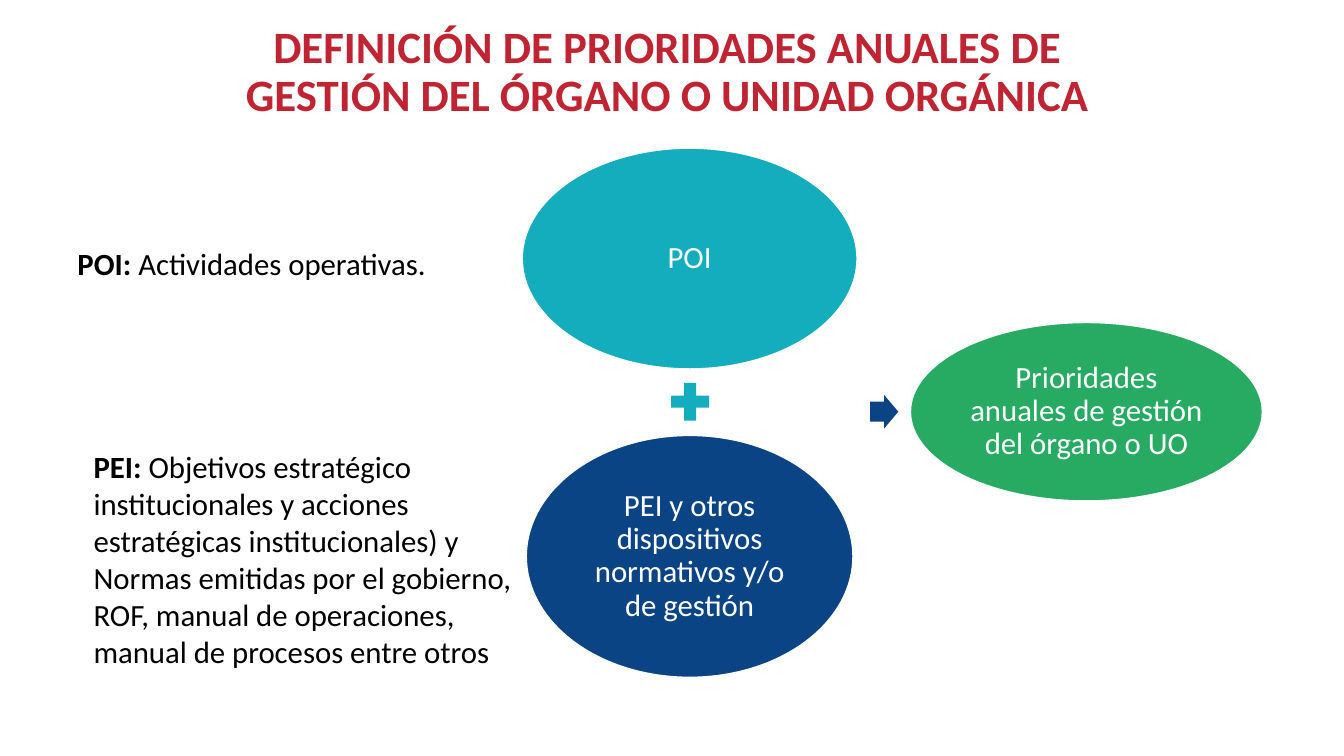
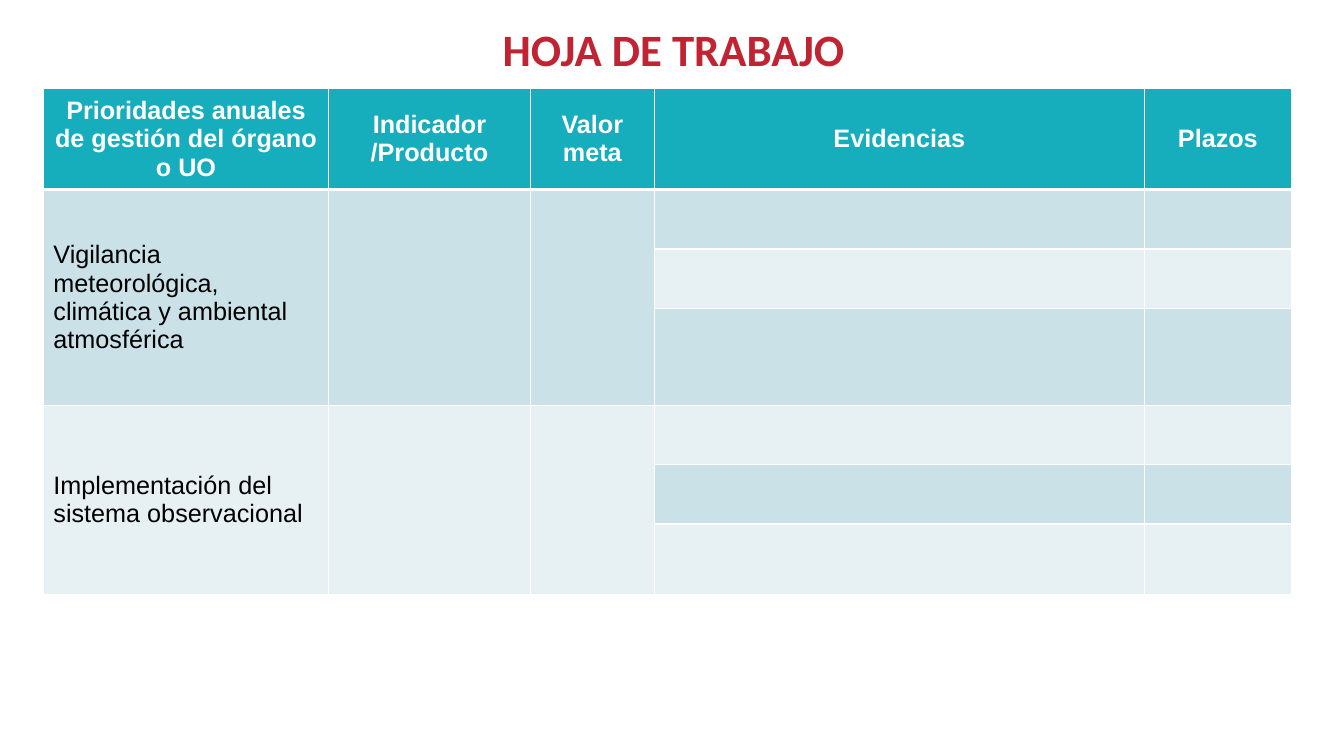
from lxml import etree
from pptx import Presentation
from pptx.dml.color import RGBColor
from pptx.enum.shapes import MSO_SHAPE
from pptx.enum.text import MSO_ANCHOR, PP_ALIGN
from pptx.oxml.ns import qn
from pptx.util import Pt

PX = 9144
ELLIPSE, PLUS, ARROW = MSO_SHAPE.OVAL, MSO_SHAPE.MATH_PLUS, MSO_SHAPE.RIGHT_ARROW
TOP, MIDDLE = MSO_ANCHOR.TOP, MSO_ANCHOR.MIDDLE
LEFT, CENTER = PP_ALIGN.LEFT, PP_ALIGN.CENTER
COLORS = {
    "title": "C02433", "teal": "13ADBD", "navy": "0B4484", "green": "27AB63",
    "header": "16ADBD", "odd": "CAE2E7", "even": "E7F1F4",
    "white": "FFFFFF", "black": "000000",
}


def color(name):
    return RGBColor.from_string(COLORS[name])


class Slides:
    def __init__(self):
        self.deck = Presentation()
        self.deck.slide_width, self.deck.slide_height = 1333 * PX, 750 * PX
        self.page = None

    def add_page(self, title, left, top, width, height):
        self.page = self.deck.slides.add_slide(self.deck.slide_layouts[6])
        self.text([[(title, True)]], left, top, width, height,
                  size=32, ink="title", align=CENTER, anchor=MIDDLE, spacing=0.9)

    def fill_text(self, frame, paragraphs, size=22, ink="black", font="Calibri",
                  align=LEFT, spacing=1.0):
        for index, spans in enumerate(paragraphs):
            para = frame.add_paragraph() if index else frame.paragraphs[0]
            para.alignment, para.line_spacing = align, spacing
            para.font.size, para.font.name = Pt(size), font
            para.font.color.rgb = color(ink)
            for words, bold in spans:
                span = para.add_run()
                span.text, span.font.bold = words, bold

    def text(self, paragraphs, left, top, width, height, anchor=TOP, **style):
        box = self.page.shapes.add_textbox(left * PX, top * PX, width * PX, height * PX)
        box.text_frame.word_wrap = True
        box.text_frame.vertical_anchor = anchor
        self.fill_text(box.text_frame, paragraphs, **style)

    def shape(self, kind, fill, left, top, width, height, adjustments=()):
        shape = self.page.shapes.add_shape(kind, left * PX, top * PX, width * PX, height * PX)
        shape.shadow.inherit = False
        shape.fill.solid()
        shape.fill.fore_color.rgb = color(fill)
        shape.line.fill.background()
        for index, value in enumerate(adjustments):
            shape.adjustments[index] = value
        return shape

    def ellipse(self, words, fill, left, top, width, height):
        shape = self.shape(ELLIPSE, fill, left, top, width, height)
        shape.line.color.rgb = color("white")
        shape.line.width = Pt(1)
        frame = shape.text_frame
        frame.word_wrap, frame.vertical_anchor = True, MIDDLE
        frame.margin_left = frame.margin_right = 3 * PX
        frame.margin_top = frame.margin_bottom = 3 * PX
        self.fill_text(frame, [[(words, False)]], ink="white", align=CENTER, spacing=0.9)

    def cell_style(self, cell, fill, top, bottom):
        properties = cell._tc.get_or_add_tcPr()
        for side, points in (("L", 1), ("R", 1), ("T", top), ("B", bottom)):
            line = etree.SubElement(properties, qn(f"a:ln{side}"), w=str(Pt(points)))
            solid = etree.SubElement(line, qn("a:solidFill"))
            etree.SubElement(solid, qn("a:srgbClr"), val=COLORS["white"])
        cell.fill.solid()
        cell.fill.fore_color.rgb = color(fill)
        cell.vertical_anchor = MIDDLE

    def table(self, headers, groups, left, top, widths, heights, span, merged_columns):
        table = self.page.shapes.add_table(
            len(heights), len(widths), left * PX, top * PX,
            sum(widths) * PX, sum(heights) * PX).table
        for column, width in zip(table.columns, widths):
            column.width = width * PX
        for index, height in enumerate(heights):
            table.rows[index].height = height * PX
            fill = "header" if index == 0 else "odd" if index % 2 else "even"
            for cell in table.rows[index].cells:
                self.cell_style(cell, fill, 3 if index == 1 else 1, 3 if index == 0 else 1)
        for column, lines in enumerate(headers):
            self.fill_text(table.cell(0, column).text_frame, [[(line, True)] for line in lines],
                           size=18, font="Arial", ink="white", align=CENTER)
        for index, words in enumerate(groups):
            first = 1 + index * span
            for column in range(merged_columns):
                table.cell(first, column).merge(table.cell(first + span - 1, column))
            self.fill_text(table.cell(first, 0).text_frame, [[(words, False)]],
                           size=18, font="Arial")


def priorities(slides):
    slides.add_page("DEFINICIÓN DE PRIORIDADES ANUALES DE GESTIÓN DEL ÓRGANO O UNIDAD ORGÁNICA",
                    206, 14, 912, 117)
    slides.ellipse("POI", "teal", 518, 147, 332, 219)
    slides.shape(PLUS, "teal", 659, 373, 51, 51, [0.235])
    slides.ellipse("PEI y otros dispositivos normativos y/o de gestión", "navy",
                   522, 432, 324, 240)
    slides.shape(ARROW, "navy", 863, 392, 28, 33, [0.6, 0.5])
    slides.ellipse("Prioridades anuales de gestión del órgano o UO", "green",
                   903, 320, 349, 177)
    slides.text([[("POI: ", True), ("Actividades operativas.", False)]], 67, 238, 384, 47)
    slides.text([
        [("PEI:", True),
         (" Objetivos estratégico institucionales y acciones estratégicas institucionales) y",
          False)],
        [("Normas emitidas por el gobierno, ROF, manual de operaciones, "
          "manual de procesos entre otros", False)],
    ], 83, 439, 450, 232)


def worksheet(slides):
    slides.add_page("HOJA DE TRABAJO", 292, 15, 752, 73)
    slides.table(
        headers=[["Prioridades anuales de gestión del órgano o UO"],
                 ["Indicador", "/Producto"], ["Valor meta"], ["Evidencias"], ["Plazos"]],
        groups=["Vigilancia meteorológica, climática y ambiental atmosférica",
                "Implementación del sistema observacional"],
        left=43, top=88, widths=[283, 200, 123, 486, 146],
        heights=[93, 59, 59, 96, 59, 59, 70], span=3, merged_columns=3)


def main():
    slides = Slides()
    priorities(slides)
    worksheet(slides)
    slides.deck.save("out.pptx")


if __name__ == "__main__":
    main()
